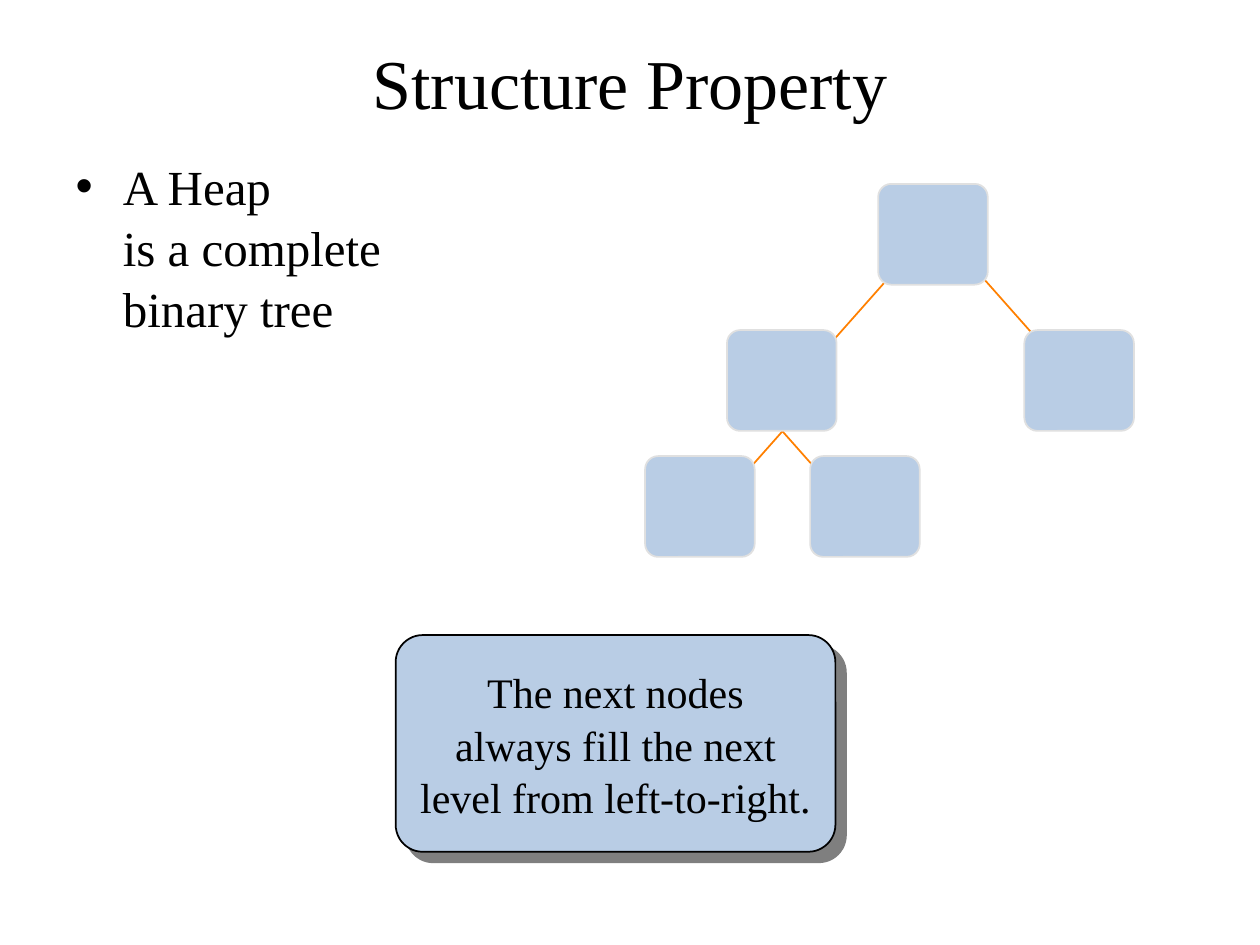
from lxml.etree import SubElement
from pptx import Presentation
from pptx.dml.color import RGBColor
from pptx.enum.shapes import MSO_CONNECTOR, MSO_SHAPE
from pptx.enum.text import MSO_ANCHOR, MSO_AUTO_SIZE, PP_ALIGN
from pptx.oxml.ns import qn
from pptx.util import Inches, Pt

COLS, ROWS = 100, 75
UNIT = Inches(10) // COLS
NODE_W, NODE_H = 8.7, 8
EDGE_DX, EDGE_DY = 6.2, 7
LEFT, RIGHT = -1, 1
FONT, BLUE, BLACK = "Times New Roman", "B9CDE5", "000000"

# Node corners and edge starts, in grid units from the tree's corner
NODES = [(18.5, 0), (6.5, 11.6), (30.1, 11.6), (0, 21.6), (13.1, 21.6)]
EDGES = [(19.2, 7.6, LEFT), (26.5, 7.1, RIGHT),
         (12.7, 17.6, LEFT), (9.1, 17.6, RIGHT)]


def rgb(hex_string):
    return RGBColor.from_string(hex_string)


def grid(*lengths):
    """Turn columns and rows into slide lengths."""
    return [round(n * UNIT) for n in lengths]


def place(sp, box):
    sp.left, sp.top, sp.width, sp.height = grid(*box)


def style_text(p, size, align, spacing=None):
    p.alignment = align
    p.line_spacing = spacing
    p.font.name, p.font.size = FONT, Pt(size)
    p.font.color.rgb = rgb(BLACK)


def add_effects(sp):
    """Add an effect list, which replaces the theme's shadow."""
    return SubElement(sp._element.spPr, qn("a:effectLst"))


def add_card(s, box, corner, line=None):
    sp = s.shapes.add_shape(MSO_SHAPE.ROUNDED_RECTANGLE, *grid(*box))
    sp.adjustments[0] = corner
    sp.fill.solid()
    sp.fill.fore_color.rgb = rgb(BLUE)
    if line:
        sp.line.color.rgb = rgb(line)
        sp.line.width = Pt(1)
    else:
        sp.line.fill.background()
    sp.shadow.inherit = False
    return sp


def add_title(s, box, text):
    sp = s.shapes.title
    place(sp, box)
    tf = sp.text_frame
    tf.text = text
    tf.auto_size = MSO_AUTO_SIZE.NONE
    tf.vertical_anchor = MSO_ANCHOR.MIDDLE
    style_text(tf.paragraphs[0], 40, PP_ALIGN.CENTER)


def add_body(s, box, text):
    sp = s.placeholders[1]
    place(sp, box)
    tf = sp.text_frame
    tf.text = text
    tf.auto_size = MSO_AUTO_SIZE.NONE
    style_text(tf.paragraphs[0], 28, PP_ALIGN.LEFT, 1.04)


def add_tree(s, left, top):
    """Draw the edges first, so that the nodes cover their ends."""
    for x, y, side in EDGES:
        x, y = left + x, top + y
        edge = s.shapes.add_connector(
            MSO_CONNECTOR.STRAIGHT,
            *grid(x, y, x + side * EDGE_DX, y + EDGE_DY))
        edge.line.color.rgb = rgb("FF8000")
        edge.line.width = Pt(1)
        add_effects(edge)
    for x, y in NODES:
        add_card(s, (left + x, top + y, NODE_W, NODE_H), 0.13, "E0E0E0")


def add_callout(s, box, lines):
    card = add_card(s, box, 0.125, BLACK)
    effects = card._element.spPr.find(qn("a:effectLst"))
    shadow = SubElement(effects, qn("a:outerShdw"), dist=str(Pt(8.5)),
                        dir="2700000", algn="ctr", rotWithShape="0")
    color = SubElement(shadow, qn("a:srgbClr"), val=BLACK)
    SubElement(color, qn("a:alpha"), val="50000")

    left, top, width, height = box
    inset = 0.7
    panel = add_card(s, (left + inset, top + inset,
                         width - 2 * inset, height - 2 * inset), 0)
    tf = panel.text_frame
    tf.word_wrap = True
    tf.vertical_anchor = MSO_ANCHOR.MIDDLE
    tf.text = "\n".join(lines)
    for p in tf.paragraphs:
        style_text(p, 24, PP_ALIGN.CENTER, 1.04)


def main():
    prs = Presentation()
    prs.slide_width, prs.slide_height = grid(COLS, ROWS)
    s = prs.slides.add_slide(prs.slide_layouts[1])
    add_title(s, (5, 3, 90, 7), "Structure Property")
    add_body(s, (5, 11.7, 90, 55.3), "A Heap\vis a complete\vbinary tree")
    add_tree(s, 51.2, 14.6)
    add_callout(s, (31.4, 50.4, 34.9, 17.2),
                ["The next nodes", "always fill the next",
                 "level from left-to-right."])
    prs.save("out.pptx")


if __name__ == "__main__":
    main()
